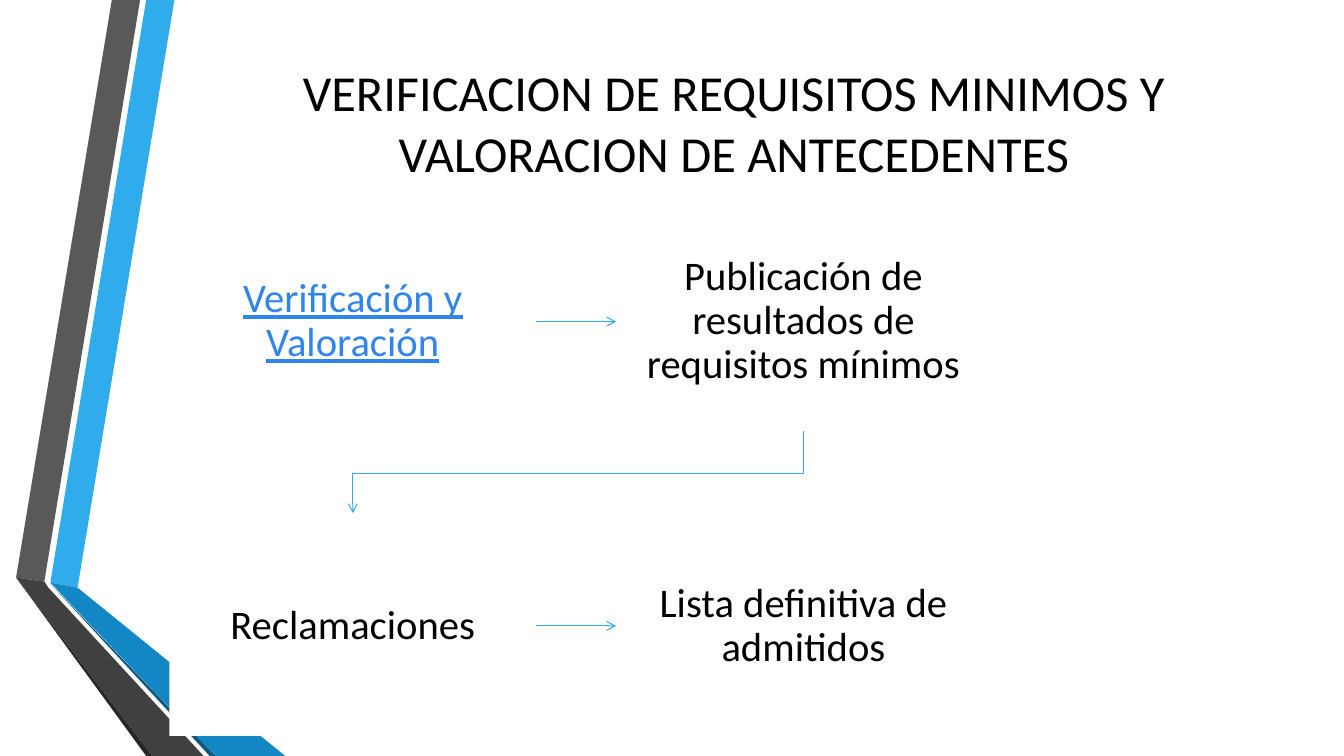
from lxml import etree
from pptx import Presentation
from pptx.dml.color import RGBColor
from pptx.enum.shapes import MSO_CONNECTOR, MSO_SHAPE
from pptx.enum.text import MSO_ANCHOR, PP_ALIGN
from pptx.oxml.ns import qn
from pptx.util import Pt

PX = 9144  # 100 px to the inch
STRAIGHT = MSO_CONNECTOR.STRAIGHT
RECTANGLE = MSO_SHAPE.RECTANGLE
MIDDLE = MSO_ANCHOR.MIDDLE
CENTER = PP_ALIGN.CENTER
BOTTOM, RIGHT = 2, 3

COLORS = {
    "white": "FFFFFF", "black": "000000", "link": "3085ED",
    "blue": "30ACEC", "blue_fold": "1287C3", "blue_edge": "0C5A82",
    "gray": "595959", "gray_fold": "404040", "gray_edge": "262626",
}


def color(name):
    return RGBColor.from_string(COLORS[name])


def style_arrow(arrow):
    """Thin blue line with an open arrowhead and no shadow."""
    arrow.line.color.rgb = color("blue")
    arrow.line.width = Pt(0.75)
    etree.SubElement(arrow.line._get_or_add_ln(), qn("a:tailEnd"), type="arrow")
    properties = arrow._element.spPr
    if properties.find(qn("a:effectLst")) is None:
        etree.SubElement(properties, qn("a:effectLst"))


deck = Presentation()
deck.slide_width, deck.slide_height = 1333 * PX, 750 * PX
slide = deck.slides.add_slide(deck.slide_layouts[6])
shapes = slide.shapes

# Folded ribbons on the left edge
ribbons = [
    ("blue", [(50, 578), (77, 583), (173, 0), (145, 0)]),
    ("gray", [(139, 0), (111, 0), (16, 573), (44, 577)]),
    ("gray_edge", [(16, 573), (145, 750), (151, 750)]),
    ("blue_edge", [(50, 579), (208, 750), (214, 750)]),
    ("blue_fold", [(50, 578), (214, 750), (283, 750), (77, 583)]),
    ("gray_fold", [(202, 750), (48, 583), (44, 577), (16, 573), (151, 750)]),
]
for fill, points in ribbons:
    builder = shapes.build_freeform(*points[0], scale=PX)
    builder.add_line_segments(points[1:], close=True)
    ribbon = builder.convert_to_shape()
    ribbon.shadow.inherit = False
    ribbon.fill.solid()
    ribbon.fill.fore_color.rgb = color(fill)
    ribbon.line.fill.background()

# Title
title = shapes.add_textbox(162 * PX, 75 * PX, 1132 * PX, 92 * PX)
frame = title.text_frame
frame.word_wrap = True
frame.vertical_anchor = MIDDLE
frame.text = "VERIFICACION DE REQUISITOS MINIMOS Y VALORACION DE ANTECEDENTES"
para = frame.paragraphs[0]
para.alignment = CENTER
para.font.name = "Calibri"
para.font.size = Pt(36)
para.font.color.rgb = color("black")

# Steps in a two by two grid
LEFT, TOP, WIDTH, HEIGHT = 168, 210, 364, 218
COLUMN_STEP, ROW_STEP = 447, 302
ARROW_LENGTH = 79
steps = [
    ("Verificación y Valoración", "link"),
    ("Publicación de resultados de requisitos mínimos", "black"),
    ("Reclamaciones", "black"),
    ("Lista definitiva de admitidos", "black"),
]
for index, (text, text_color) in enumerate(steps):
    row, column = divmod(index, 2)
    left, top = LEFT + column * COLUMN_STEP, TOP + row * ROW_STEP
    box = shapes.add_shape(RECTANGLE, left * PX, top * PX, WIDTH * PX, HEIGHT * PX)
    box.shadow.inherit = False
    box.fill.solid()
    box.fill.fore_color.rgb = color("white")
    box.line.fill.background()
    frame = box.text_frame
    frame.word_wrap = True
    frame.vertical_anchor = MIDDLE
    frame.margin_left = frame.margin_right = 23 * PX
    frame.margin_top = frame.margin_bottom = 23 * PX
    frame.text = text
    para = frame.paragraphs[0]
    para.alignment = CENTER
    para.line_spacing = 0.9
    span = para.runs[0]
    span.font.name = "Calibri"
    span.font.size = Pt(29)
    span.font.color.rgb = color(text_color)
    span.font.underline = text_color == "link"

    if column == 0:
        right, middle = left + WIDTH, top + HEIGHT // 2
        arrow = shapes.add_connector(
            STRAIGHT, right * PX, middle * PX, (right + ARROW_LENGTH) * PX, middle * PX)
        arrow.begin_connect(box, RIGHT)
        style_arrow(arrow)

# Bent arrow from the second step down to the third
start_x, end_x = LEFT + COLUMN_STEP + WIDTH // 2, LEFT + WIDTH // 2
start_y = TOP + HEIGHT
builder = shapes.build_freeform(start_x, start_y, scale=PX)
builder.add_line_segments(
    [(start_x, start_y + 42), (end_x, start_y + 42), (end_x, start_y + 81)], close=False)
bent_arrow = builder.convert_to_shape()
bent_arrow.fill.background()
style_arrow(bent_arrow)

deck.save("out.pptx")
